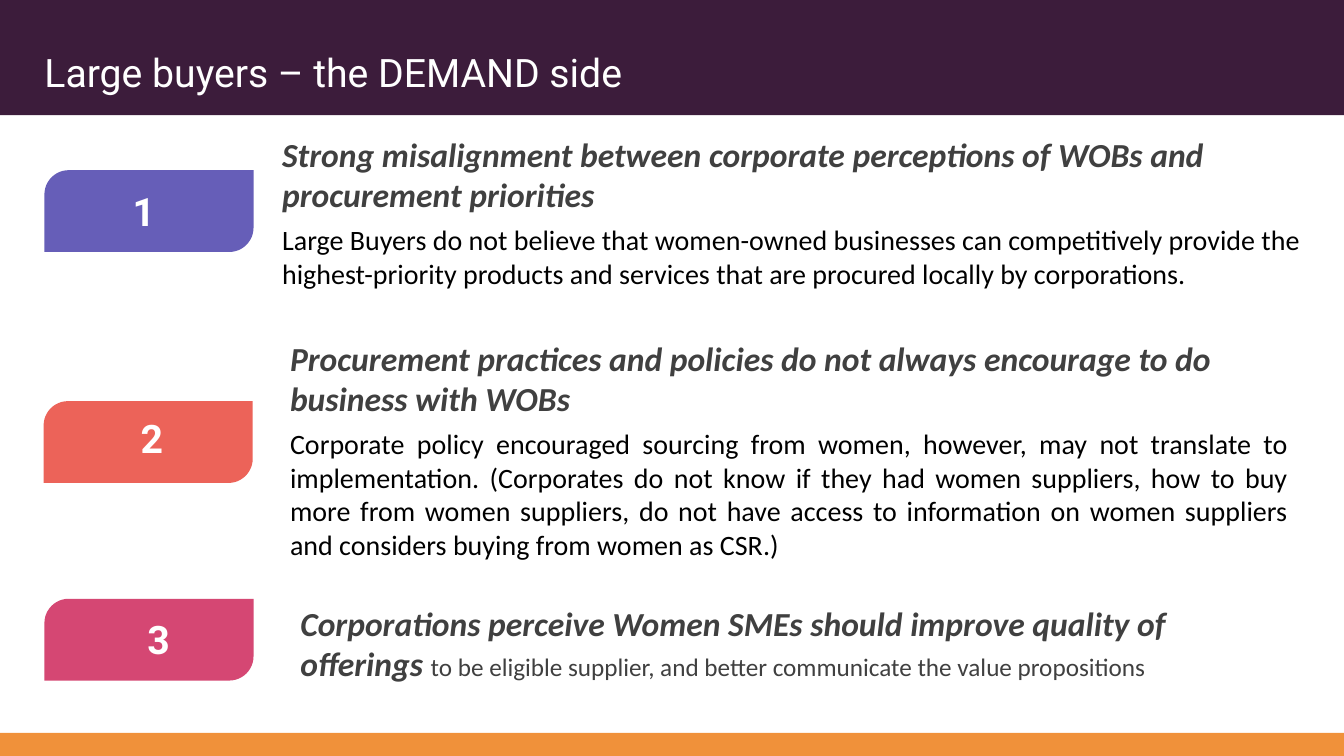
import pptx
import pptx.util
import pptx.dml.color
import pptx.enum.shapes
import pptx.enum.text

Cm = pptx.util.Cm
RGBColor = pptx.dml.color.RGBColor
Shape = pptx.enum.shapes.MSO_SHAPE
Align = pptx.enum.text.PP_ALIGN
Anchor = pptx.enum.text.MSO_ANCHOR
Fit = pptx.enum.text.MSO_AUTO_SIZE

PLUM = RGBColor(0x3C, 0x1C, 0x3B)
ORANGE = RGBColor(0xF0, 0x91, 0x3A)
VIOLET = RGBColor(0x66, 0x5E, 0xB8)
CORAL = RGBColor(0xEC, 0x63, 0x59)
PINK = RGBColor(0xD5, 0x47, 0x73)
WHITE = RGBColor(0xFF, 0xFF, 0xFF)
BLACK = RGBColor(0, 0, 0)
GREY = RGBColor(0x40, 0x40, 0x40)

WIDE, HIGH = 33.87, 19.05
TAG = (5.27, 2.06)
NUM = (4.34, 1.45)

HEAD = dict(size=24, color=GREY, bold=True, italic=True)
NOTE = dict(size=20, color=BLACK)

# Each point: color, tag corner, number with its offset, text box,
# then paragraphs as (alignment, runs)
POINTS = [
    (VIOLET, (1.12, 4.29), "1 ", (0.46, 0.3), (6.86, 3.25, 26.24, 4.24), [
        (Align.LEFT, [("Strong misalignment between corporate perceptions of WOBs "
                       "and procurement priorities", HEAD)]),
        (Align.LEFT, [("Large Buyers do not believe that women-owned businesses can "
                       "competitively provide the highest-priority products and "
                       "services that are procured locally by corporations.", NOTE)]),
    ]),
    (CORAL, (1.1, 10.11), "2", (0.56, 0.2), (7.06, 8.38, 25.65, 5.94), [
        (Align.LEFT, [("Procurement practices and policies do not always encourage "
                       "to do business with WOBs", HEAD)]),
        (Align.JUSTIFY, [("Corporate policy encouraged sourcing from women, however, "
                          "may not translate to implementation. (Corporates do not "
                          "know if they had women suppliers, how to buy more from "
                          "women suppliers, do not have access to information on "
                          "women suppliers and considers buying from women as CSR.)",
                          NOTE)]),
    ]),
    (PINK, (1.12, 15.09), "3", (0.71, 0.3), (7.32, 15.06, 25.32, 2.31), [
        (Align.LEFT, [("Corporations perceive Women SMEs should improve quality of "
                       "offerings ", HEAD),
                      ("to be eligible supplier, and better communicate the value "
                       "propositions", dict(size=18, color=GREY))]),
    ]),
]


def write(para, text, size, color, font="Calibri", bold=False, italic=False,
          align=Align.LEFT, after=0):
    run = para.add_run()
    run.text = text
    run.font.name = font
    run.font.size = pptx.util.Pt(size)
    run.font.color.rgb = color
    run.font.bold = bold
    run.font.italic = italic
    para.alignment = align
    para.space_after = pptx.util.Pt(after)


def block(shapes, kind, box, color):
    shape = shapes.add_shape(kind, *map(Cm, box))
    shape.shadow.inherit = False
    shape.fill.solid()
    shape.fill.fore_color.rgb = color
    shape.line.fill.background()
    return shape


def frame(shapes, box):
    text = shapes.add_textbox(*map(Cm, box)).text_frame
    text.word_wrap = True
    text.auto_size = Fit.SHAPE_TO_FIT_TEXT
    return text


def bands(slide):
    block(slide.shapes, Shape.RECTANGLE, (0, 18.47, WIDE, HIGH - 18.47), ORANGE)
    block(slide.shapes, Shape.RECTANGLE, (0, 0, WIDE, 2.9), PLUM)


def title(slide, box, text):
    head = slide.shapes.title
    head.left, head.top, head.width, head.height = map(Cm, box)
    # Lift the title above the band
    slide.shapes.element.append(head.element)
    body = head.text_frame
    body.margin_left = body.margin_right = body.margin_top = body.margin_bottom = 0
    body.vertical_anchor = Anchor.BOTTOM
    body.auto_size = Fit.NONE
    body.word_wrap = True
    write(body.paragraphs[0], text, 28, WHITE, font="Roboto")


def tag(slide, spot, color, label, shift):
    group = slide.shapes.add_group_shape()
    left, top = spot
    leaf = block(group.shapes, Shape.ROUND_2_DIAG_RECTANGLE, (left, top, *TAG), color)
    leaf.adjustments[0] = 0.297
    text = frame(group.shapes, (left + shift[0], top + shift[1], *NUM))
    write(text.paragraphs[0], label, 28, WHITE, font="Roboto", bold=True,
          align=Align.CENTER)


def body(slide, box, paras):
    text = frame(slide.shapes, box)
    for i, (align, runs) in enumerate(paras):
        para = text.add_paragraph() if i else text.paragraphs[0]
        for words, style in runs:
            write(para, words, align=align, after=6, **style)


def main():
    deck = pptx.Presentation()
    deck.slide_width, deck.slide_height = Cm(WIDE), Cm(HIGH)
    slide = deck.slides.add_slide(deck.slide_layouts[5])
    bands(slide)
    title(slide, (1.12, 0.3, 23.5, 2.11), "Large buyers – the DEMAND side")
    for color, spot, label, shift, box, paras in POINTS:
        tag(slide, spot, color, label, shift)
        body(slide, box, paras)
    deck.save("out.pptx")


if __name__ == "__main__":
    main()
